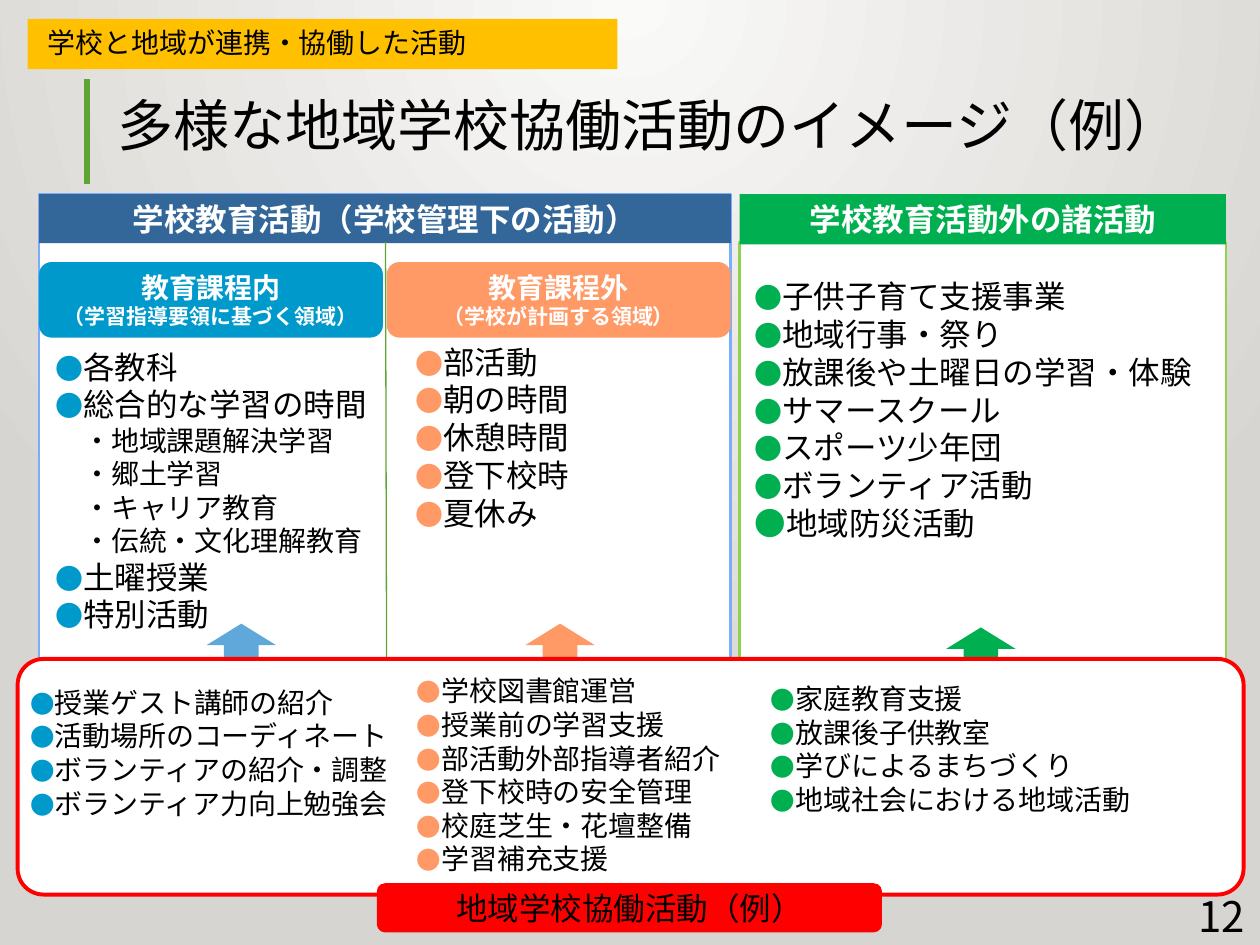
"""Build the slide on school and community joint activities."""
from typing import NamedTuple

from lxml import etree
from pptx import Presentation
from pptx.dml.color import RGBColor
from pptx.enum.shapes import MSO_CONNECTOR, MSO_SHAPE
from pptx.enum.text import MSO_ANCHOR, PP_ALIGN
from pptx.oxml.ns import qn
from pptx.util import Inches, Pt

RECT, ROUND, ARROW = MSO_SHAPE.RECTANGLE, MSO_SHAPE.ROUNDED_RECTANGLE, MSO_SHAPE.UP_ARROW
STRAIGHT = MSO_CONNECTOR.STRAIGHT
LEFT, CENTER, RIGHT = PP_ALIGN.LEFT, PP_ALIGN.CENTER, PP_ALIGN.RIGHT
TOP, MIDDLE = MSO_ANCHOR.TOP, MSO_ANCHOR.MIDDLE

FONT = "Noto Sans CJK JP"
BLACK = RGBColor(0x00, 0x00, 0x00)
WHITE = RGBColor(0xFF, 0xFF, 0xFF)
RED = RGBColor(0xFF, 0x00, 0x00)
NAVY = RGBColor(0x33, 0x66, 0x99)
BLUE = RGBColor(0x00, 0x99, 0xCC)
SKY = RGBColor(0x61, 0xA8, 0xDA)
PALE = RGBColor(0x7C, 0xAD, 0xFC)
CORAL = RGBColor(0xFF, 0x99, 0x66)
GREEN = RGBColor(0x00, 0xB0, 0x50)
LIME = RGBColor(0x92, 0xD0, 0x50)
LEAF = RGBColor(0x5F, 0xA5, 0x34)
GOLD = RGBColor(0xFF, 0xC0, 0x00)
LIGHT = RGBColor(0xFA, 0xFA, 0xF9)
GREY = RGBColor(0xD7, 0xD5, 0xD2)


class Box(NamedTuple):
    x: float
    y: float
    w: float
    h: float


class Block(NamedTuple):
    box: Box
    fill: RGBColor
    lines: tuple = ()
    kind: int = RECT
    edge: RGBColor | None = None
    width: float = 1.5
    ink: RGBColor = WHITE
    bold: bool = True


class Points(NamedTuple):
    box: Box
    tint: RGBColor
    size: int
    items: tuple
    last: int = 0


PANELS = (
    Block(Box(0.31, 1.54, 5.49, 4.4), WHITE, edge=PALE),
    Block(Box(0.31, 1.54, 5.49, 0.39), NAVY, (("学校教育活動（学校管理下の活動）", 18),)),
    Block(Box(0.31, 2.08, 2.73, 0.6), BLUE,
          (("教育課程内", 16), ("（学習指導要領に基づく領域）", 12)), ROUND),
    Block(Box(3.07, 2.08, 2.73, 0.6), CORAL,
          (("教育課程外", 16), ("（学校が計画する領域）", 12)), ROUND),
    Block(Box(5.87, 1.92, 3.86, 4.4), WHITE, edge=LIME),
    Block(Box(5.87, 1.54, 3.86, 0.4), GREEN, (("学校教育活動外の諸活動", 18),)),
)
ARROWS = tuple(Block(Box(x, y, 0.55, 0.34), tint, kind=ARROW)
               for x, y, tint in ((1.64, 4.95, SKY), (4.17, 4.95, CORAL), (7.51, 4.98, GREEN)))
FRAME = Block(Box(0.14, 5.23, 9.73, 1.87), WHITE, kind=ROUND, edge=RED, width=2.25)
LABEL = Block(Box(2.99, 7.01, 4.01, 0.39), RED, (("地域学校協働活動（例）", 18),),
              ROUND, ink=BLACK, bold=False)
UPPER = (
    Points(Box(0.34, 2.71, 2.89, 2.39), BLUE, 18,
           ("各教科", "総合的な学習の時間", "・地域課題解決学習", "・郷土学習",
            "・キャリア教育", "・伝統・文化理解教育", "土曜授業", "特別活動")),
    Points(Box(3.2, 2.67, 1.44, 1.62), CORAL, 18,
           ("部活動", "朝の時間", "休憩時間", "登下校時", "夏休み")),
    Points(Box(5.89, 2.15, 3.79, 2.49), GREEN, 18,
           ("子供子育て支援事業", "地域行事・祭り", "放課後や土曜日の学習・体験",
            "サマースクール", "スポーツ少年団", "ボランティア活動", "地域防災活動"), last=18),
)
LOWER = (
    Points(Box(0.14, 5.39, 3.27, 1.18), BLUE, 16,
           ("授業ゲスト講師の紹介", "活動場所のコーディネート",
            "ボランティアの紹介・調整", "ボランティア力向上勉強会")),
    Points(Box(3.21, 5.3, 3.27, 1.72), CORAL, 16,
           ("学校図書館運営", "授業前の学習支援", "部活動外部指導者紹介",
            "登下校時の安全管理", "校庭芝生・花壇整備", "学習補充支援")),
    Points(Box(6.02, 5.36, 3.74, 1.18), GREEN, 16,
           ("家庭教育支援", "放課後子供教室", "学びによるまちづくり", "地域社会における地域活動")),
)


def place(box: Box) -> tuple:
    return tuple(Inches(n) for n in box)


def write(para, text: str, *, size: float, ink: RGBColor = BLACK,
          bold: bool = False, align: int = LEFT) -> None:
    para.alignment = align
    run = para.add_run()
    run.text = text
    font = run.font
    font.size, font.bold, font.name = Pt(size), bold, FONT
    font.color.rgb = ink
    etree.SubElement(run._r.get_or_add_rPr(), qn("a:ea"), typeface=FONT)


def next_para(frame, index: int):
    return frame.add_paragraph() if index else frame.paragraphs[0]


def draw_block(slide, block: Block):
    shape = slide.shapes.add_shape(block.kind, *place(block.box))
    shape.shadow.inherit = False
    shape.fill.solid()
    shape.fill.fore_color.rgb = block.fill
    if block.edge is None:
        shape.line.fill.background()
    else:
        shape.line.color.rgb = block.edge
        shape.line.width = Pt(block.width)
    frame = shape.text_frame
    frame.vertical_anchor = MIDDLE
    for i, (text, size) in enumerate(block.lines):
        write(next_para(frame, i), text, size=size, ink=block.ink,
              bold=block.bold, align=CENTER)
    return shape


def add_frame(slide, box: Box):
    frame = slide.shapes.add_textbox(*place(box)).text_frame
    frame.word_wrap = True
    return frame


def draw_points(slide, points: Points) -> None:
    frame = add_frame(slide, points.box)
    for i, item in enumerate(points.items):
        para = next_para(frame, i)
        if item.startswith("・"):
            para._p.get_or_add_pPr().set("marL", str(Pt(16)))
            write(para, item, size=16)
            continue
        final = i == len(points.items) - 1
        mark = points.last if final and points.last else points.size - 2
        write(para, "●", size=mark, ink=points.tint)
        write(para, item, size=points.size)


def draw_line(slide, start: tuple, end: tuple, width: float) -> None:
    line = slide.shapes.add_connector(STRAIGHT, *(Inches(n) for n in start + end))
    line.line.color.rgb = LEAF
    line.line.width = Pt(width)
    etree.SubElement(line._element.spPr, qn("a:effectLst"))


def paint_back(slide) -> None:
    fill = slide.background.fill
    fill.gradient()
    for stop, tint in zip(fill.gradient_stops, (LIGHT, GREY)):
        stop.color.rgb = tint
    fill.gradient_stops[0].position = 0
    fill.gradient_stops[1].position = 1
    grad = slide.element.find(".//" + qn("a:gradFill"))
    grad.remove(grad.find(qn("a:lin")))
    glow = etree.Element(qn("a:path"), {"path": "circle"})
    etree.SubElement(glow, qn("a:fillToRect"), l="43000", t="0", r="43000", b="100000")
    grad.find(qn("a:gsLst")).addnext(glow)


def main() -> None:
    deck = Presentation()
    deck.slide_width, deck.slide_height = Inches(10), Inches(7.5)
    slide = deck.slides.add_slide(deck.slide_layouts[6])
    paint_back(slide)
    for panel in PANELS:
        draw_block(slide, panel)
    for points in UPPER:
        draw_points(slide, points)
    draw_line(slide, (3.06, 1.92), (3.07, 5.94), 0.75)
    title = add_frame(slide, Box(0.73, 0.67, 8.94, 0.64))
    title.margin_left = Inches(0.2)
    write(title.paragraphs[0], "多様な地域学校協働活動のイメージ（例）", size=32)
    topic = draw_block(slide, Block(Box(0.22, 0.15, 4.68, 0.4), GOLD)).text_frame
    topic.vertical_anchor = TOP
    topic.margin_left = Inches(0.16)
    write(topic.paragraphs[0], "学校と地域が連携・協働した活動", size=16)
    draw_line(slide, (0.69, 0.63), (0.69, 1.46), 3)
    number = add_frame(slide, Box(9, 7.02, 0.98, 0.5))
    write(number.paragraphs[0], "12", size=24, align=RIGHT)
    for arrow in ARROWS:
        draw_block(slide, arrow)
    draw_block(slide, FRAME).adjustments[0] = 0.11
    for points in LOWER:
        draw_points(slide, points)
    draw_block(slide, LABEL)
    deck.save("out.pptx")


if __name__ == "__main__":
    main()
